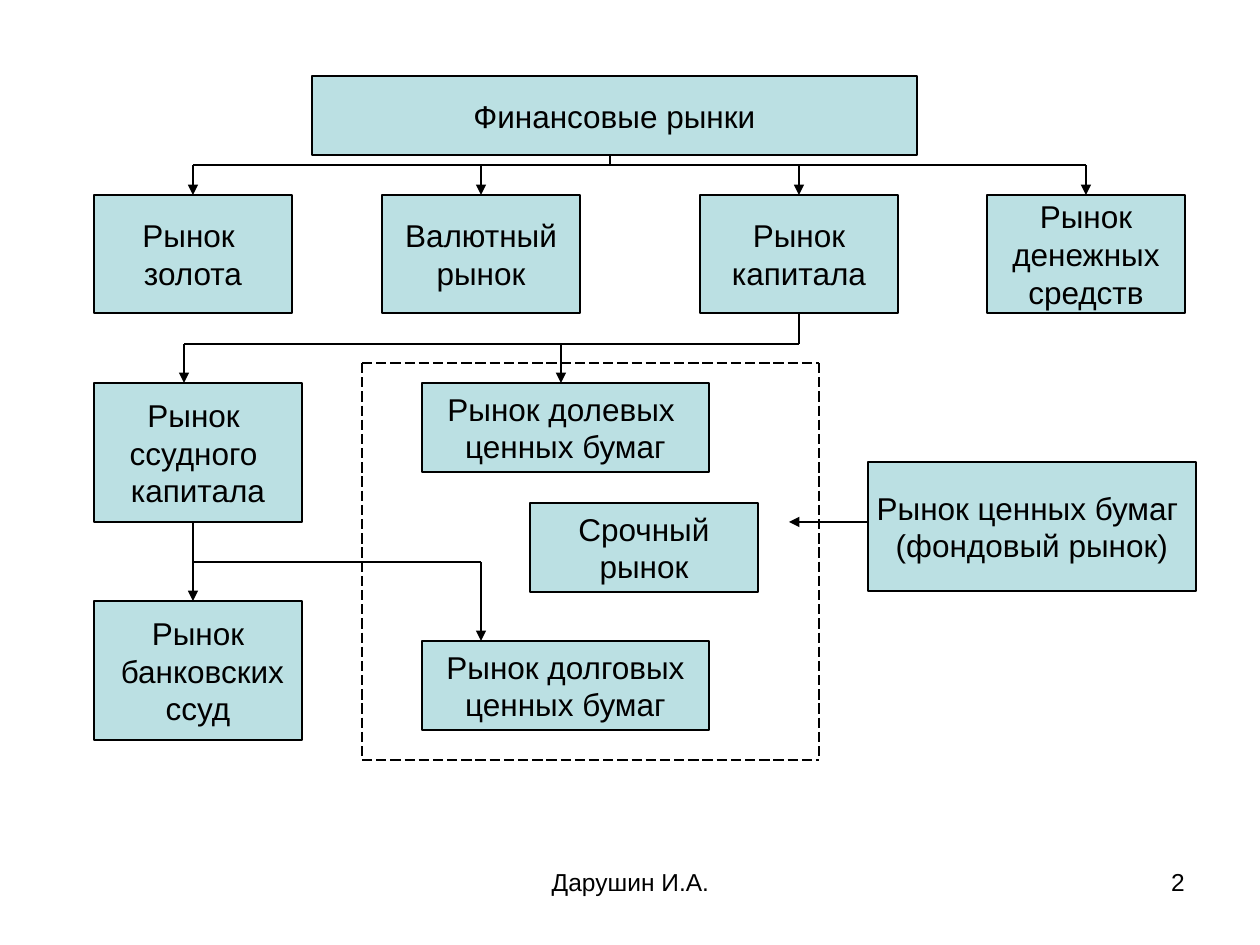
import pptx
import pptx.dml.color
import pptx.enum.dml
import pptx.enum.shapes
import pptx.enum.text
import pptx.oxml.ns
import pptx.util
from lxml import etree

PX = 914400 // 126
BLACK, PALE_TEAL = "000000", "BBE0E3"
ALIGN = pptx.enum.text.PP_ALIGN

# Columns and levels shared by boxes and lines
LEFT = 94
BUS_1, ROW_1, ROW_1_END = 165, 195, 313
BUS_2, ROW_2 = 344, 383
BUS_3, LOANS_END, BANK_TOP, DEBT_TOP = 562, 522, 601, 641
GOLD_X, CURRENCY_X, CAPITAL_X, MONEY_X = 193, 481, 799, 1086
LOANS_X, EQUITY_X, TRUNK_X = 184, 561, 610

# Market boxes: left, top, width, height, lines of text
BOXES = [
    (312, 76, 605, 79, ["Финансовые рынки"]),
    (LEFT, ROW_2, 208, 139, ["Рынок ", "ссудного ", "капитала"]),
    (LEFT, BANK_TOP, 208, 139, ["Рынок", " банковских", "ссуд"]),
    (422, ROW_2, 287, 89, ["Рынок долевых ", "ценных бумаг"]),
    (422, DEBT_TOP, 287, 89, ["Рынок долговых", "ценных бумаг"]),
    (530, 503, 228, 89, ["Срочный", "рынок"]),
    (868, 462, 328, 129, ["Рынок ценных бумаг ", "(фондовый рынок)"]),
]
# First-level markets, centred under their arrows
MARKET_WIDTH = 198
MARKETS = [
    (GOLD_X, ["Рынок ", "золота"]),
    (CURRENCY_X, ["Валютный", "рынок"]),
    (CAPITAL_X, ["Рынок", "капитала"]),
    (MONEY_X, ["Рынок", "денежных", "средств"]),
]
# Lines: x and y of the start, x and y of the end
PLAIN_LINES = [
    (TRUNK_X, 155, TRUNK_X, BUS_1),
    (GOLD_X, BUS_1, MONEY_X, BUS_1),
    (CAPITAL_X, ROW_1_END, CAPITAL_X, BUS_2),
    (CAPITAL_X, BUS_2, LOANS_X, BUS_2),
    (GOLD_X, BUS_3, CURRENCY_X, BUS_3),
]
ARROWS = [(x, BUS_1, x, ROW_1) for x, _ in MARKETS] + [
    (LOANS_X, BUS_2, LOANS_X, ROW_2),
    (EQUITY_X, BUS_2, EQUITY_X, ROW_2),
    (GOLD_X, LOANS_END, GOLD_X, BANK_TOP),
    (CURRENCY_X, BUS_3, CURRENCY_X, DEBT_TOP),
    (868, 522, 789, 522),
]
FRAME_LEFT, FRAME_TOP, FRAME_RIGHT, FRAME_BOTTOM = 362, 363, 819, 760
FRAME_LINES = [
    (FRAME_LEFT, FRAME_TOP, FRAME_LEFT, FRAME_BOTTOM),
    (FRAME_LEFT, FRAME_TOP, FRAME_RIGHT, FRAME_TOP),
    (FRAME_RIGHT, FRAME_TOP, FRAME_RIGHT, FRAME_BOTTOM),
    (FRAME_LEFT, FRAME_BOTTOM, FRAME_RIGHT, FRAME_BOTTOM),
]
# Footer: left, top, width, height, text, alignment
FOOTERS = [
    (431, 861, 399, 66, "Дарушин И.А.", ALIGN.CENTER),
    (903, 861, 294, 66, "2", ALIGN.RIGHT),
]


def emu(*lengths):
    return [length * PX for length in lengths]


def color(value):
    return pptx.dml.color.RGBColor.from_string(value)


def write(frame, lines, size, align):
    for index, line in enumerate(lines):
        para = frame.add_paragraph() if index else frame.paragraphs[0]
        para.text = line
        para.alignment = align
        para.font.name = "Arial"
        para.font.size = pptx.util.Pt(size)
        para.font.color.rgb = color(BLACK)


def style_line(line):
    line.color.rgb = color(BLACK)
    line.width = pptx.util.Pt(0.75)


def add_box(slide, left, top, width, height, lines):
    box = slide.shapes.add_shape(
        pptx.enum.shapes.MSO_SHAPE.RECTANGLE, *emu(left, top, width, height))
    box.shadow.inherit = False
    box.fill.solid()
    box.fill.fore_color.rgb = color(PALE_TEAL)
    style_line(box.line)
    box.text_frame.word_wrap = False
    box.text_frame.vertical_anchor = pptx.enum.text.MSO_ANCHOR.MIDDLE
    write(box.text_frame, lines, 18, ALIGN.CENTER)


def add_line(slide, ends, arrow=False, dashed=False):
    connector = slide.shapes.add_connector(
        pptx.enum.shapes.MSO_CONNECTOR.STRAIGHT, *emu(*ends))
    style_line(connector.line)
    if dashed:
        connector.line.dash_style = pptx.enum.dml.MSO_LINE.LONG_DASH
    if arrow:
        outline = connector.line._get_or_add_ln()
        etree.SubElement(outline, pptx.oxml.ns.qn("a:tailEnd"), type="triangle")
    properties = connector._element.spPr
    etree.SubElement(properties, pptx.oxml.ns.qn("a:effectLst"))


def main():
    deck = pptx.Presentation()
    deck.slide_width, deck.slide_height = emu(1260, 945)
    slide = deck.slides.add_slide(deck.slide_layouts[6])

    for left, top, width, height, text, align in FOOTERS:
        box = slide.shapes.add_textbox(*emu(left, top, width, height))
        box.text_frame.word_wrap = True
        write(box.text_frame, [text], 14, align)

    for box in BOXES:
        add_box(slide, *box)
    for center, lines in MARKETS:
        add_box(slide, center - MARKET_WIDTH // 2, ROW_1,
                MARKET_WIDTH, ROW_1_END - ROW_1, lines)

    for ends in PLAIN_LINES:
        add_line(slide, ends)
    for ends in ARROWS:
        add_line(slide, ends, arrow=True)
    for ends in FRAME_LINES:
        add_line(slide, ends, dashed=True)

    deck.save("out.pptx")


if __name__ == "__main__":
    main()
